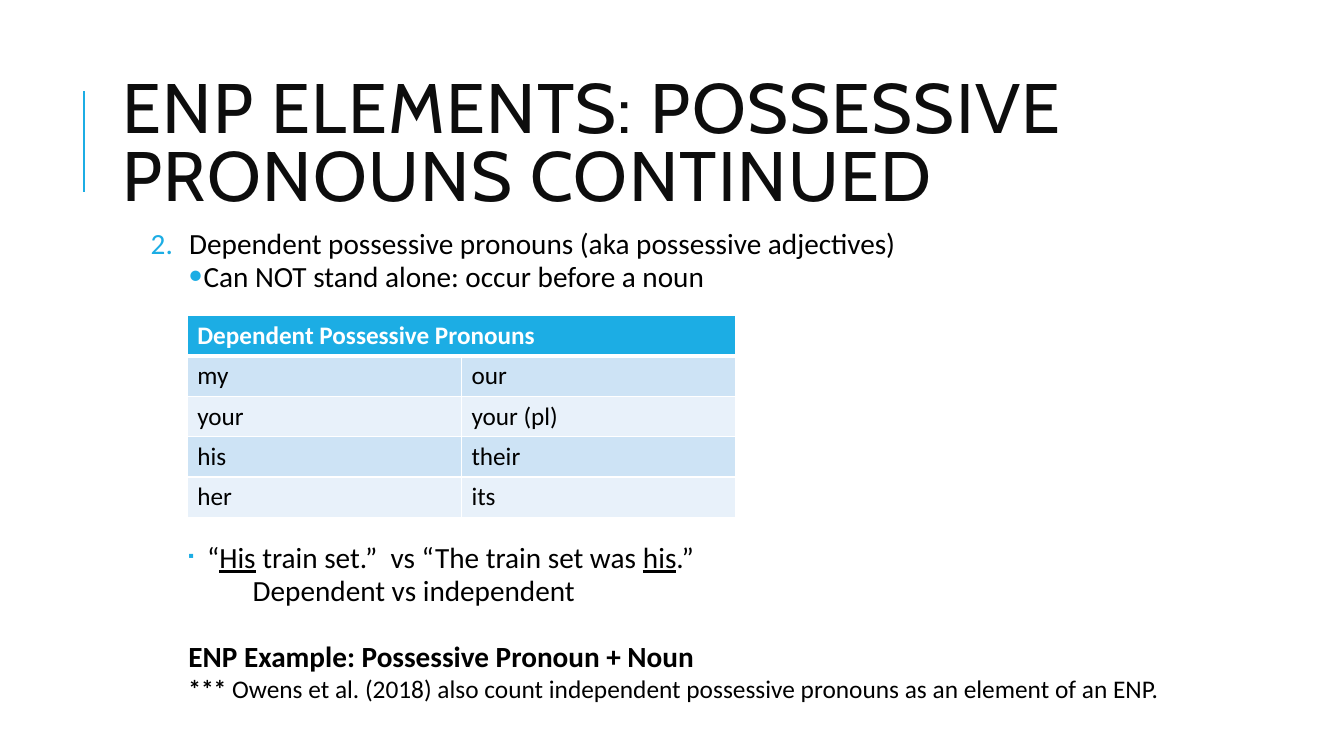
from dataclasses import dataclass

from lxml.etree import SubElement
from pptx import Presentation
from pptx.dml.color import RGBColor
from pptx.enum.shapes import MSO_CONNECTOR
from pptx.enum.text import MSO_ANCHOR
from pptx.oxml import parse_xml
from pptx.oxml.ns import nsdecls, qn
from pptx.util import Cm, Pt


@dataclass(frozen=True)
class Theme:
    title_font: str = "Cabin"
    body_font: str = "Calibri"
    accent: str = "1CADE4"
    title_color: str = "0D0D0D"
    text: str = "000000"
    white: str = "FFFFFF"
    bands: tuple = ("CDE3F5", "E8F1FA")
    title_size: float = 50
    body_size: float = 20.9
    note_size: float = 18.1
    table_size: float = 18
    spacer_size: float = 11.4


@dataclass(frozen=True)
class Box:
    left: float
    top: float
    width: float
    height: float

    def lengths(self):
        return Cm(self.left), Cm(self.top), Cm(self.width), Cm(self.height)


THEME = Theme()
NUMBER = ("buAutoNum", {"type": "arabicPeriod", "startAt": "2"})
DOT = ("buChar", {"char": "•"})
SQUARE = ("buChar", {"char": "▪"})
PRONOUNS = [("my", "our"), ("your", "your (pl)"), ("his", "their"), ("her", "its")]


def set_font(font, name, size, color, bold=False):
    font.name = name
    font.size = Pt(size)
    font.bold = bold
    font.color.rgb = RGBColor.from_string(color)


def add_text_frame(slide, box):
    frame = slide.shapes.add_textbox(*box.lengths()).text_frame
    frame.word_wrap = True
    return frame


def add_title(slide, box):
    # Accent rule to the left of the title
    rule_left = Cm(box.left - 0.73)
    rule = slide.shapes.add_connector(
        MSO_CONNECTOR.STRAIGHT, rule_left, Cm(box.top + 3.2), rule_left, Cm(box.top + 0.66))
    rule.line.color.rgb = RGBColor.from_string(THEME.accent)
    rule.line.width = Pt(1.5)
    SubElement(rule._element.spPr, qn("a:effectLst"))

    # Title text
    frame = add_text_frame(slide, box)
    frame.vertical_anchor = MSO_ANCHOR.MIDDLE
    paragraph = frame.paragraphs[0]
    paragraph.line_spacing = 0.8
    run = paragraph.add_run()
    run.text = "ENP ELEMENTS: POSSESSIVE PRONOUNS CONTINUED"
    set_font(paragraph.font, THEME.title_font, THEME.title_size, THEME.title_color)
    run.font._element.set("spc", "100")


def add_bullet(paragraph, bullet):
    tag, attributes = bullet
    properties = paragraph._p.get_or_add_pPr()
    color = SubElement(properties, qn("a:buClr"))
    SubElement(color, qn("a:srgbClr"), val=THEME.accent)
    SubElement(properties, qn("a:buFont"), typeface=THEME.body_font)
    SubElement(properties, qn(f"a:{tag}"), attributes)


def add_body(slide, box, lines):
    """Each line is (runs, margin, indent, options); a run is (text, font settings)."""
    frame = add_text_frame(slide, box)
    frame.margin_left = frame.margin_right = Cm(0.13)
    frame.margin_top = frame.margin_bottom = Cm(0.13)
    for index, (runs, margin, indent, options) in enumerate(lines):
        paragraph = frame.add_paragraph() if index else frame.paragraphs[0]
        paragraph.line_spacing = 0.7
        paragraph.space_before = Pt(options.get("before", 2))
        paragraph.space_after = Pt(4)
        properties = paragraph._p.get_or_add_pPr()
        properties.set("marL", str(Cm(margin)))
        properties.set("indent", str(Cm(indent)))
        if "bullet" in options:
            add_bullet(paragraph, options["bullet"])
        set_font(paragraph.font, THEME.body_font, options.get("size", THEME.body_size),
                 THEME.text)
        for text, settings in runs:
            run = paragraph.add_run()
            run.text = text
            for name, value in settings.items():
                setattr(run.font, name, value)


def style_cell(cell, fill, color, bold, bottom_width):
    cell.fill.solid()
    cell.fill.fore_color.rgb = RGBColor.from_string(fill)
    set_font(cell.text_frame.paragraphs[0].font, THEME.body_font, THEME.table_size, color, bold)
    # Borders come before the fill in the cell properties
    widths = {"lnL": 1, "lnR": 1, "lnT": 1, "lnB": bottom_width}
    for position, (side, width) in enumerate(widths.items()):
        border = parse_xml(
            f'<a:{side} {nsdecls("a")} w="{Pt(width)}"><a:solidFill>'
            f'<a:srgbClr val="{THEME.white}"/></a:solidFill></a:{side}>')
        cell._tc.get_or_add_tcPr().insert(position, border)


def add_pronoun_table(slide, box):
    row_count = len(PRONOUNS) + 1
    table = slide.shapes.add_table(row_count, 2, *box.lengths()).table
    # Header across both columns
    table.cell(0, 0).text = "Dependent Possessive Pronouns"
    for column in range(2):
        style_cell(table.cell(0, column), THEME.accent, THEME.white, True, 3)
    table.cell(0, 0).merge(table.cell(0, 1))
    # Banded rows
    for row, pair in enumerate(PRONOUNS, start=1):
        for column, word in enumerate(pair):
            cell = table.cell(row, column)
            cell.text = word
            style_cell(cell, THEME.bands[(row - 1) % 2], THEME.text, False, 1)
            if row == 1:
                cell._tc.tcPr.find(qn("a:lnT")).set("w", str(Pt(3)))


def build_slide(presentation):
    slide = presentation.slides.add_slide(presentation.slide_layouts[6])
    add_title(slide, Box(2.84, 1.63, 27, 4.17))

    # Definition above the table
    add_body(slide, Box(2.84, 5.79, 27, 2.16), [
        ([("Dependent possessive pronouns (aka possessive adjectives)", {})],
         1.8, -0.97, {"bullet": NUMBER}),
        ([("Can NOT stand alone: occur before a noun", {})], 2.16, -0.38, {"bullet": DOT}),
    ])
    add_pronoun_table(slide, Box(4.72, 7.95, 13.82, 5.08))

    # Examples below the table
    underlined, bold = {"underline": True}, {"bold": True}
    add_body(slide, Box(2.84, 13.7, 27, 4.69), [
        ([(" ", {"size": Pt(THEME.spacer_size)}), ("“", {}), ("His", underlined),
          (" train set.”  vs “The train set was ", {}), ("his", underlined), (".”", {})],
         2.16, -0.38, {"bullet": SQUARE}),
        ([("Dependent vs independent", {})], 3.4, 0, {}),
        ([("ENP Example: Possessive Pronoun + Noun", bold)], 1.78, 0, {"before": 25.85}),
        ([("*** ", bold),
          ("Owens et al. (2018) also count independent possessive pronouns "
           "as an element of an ENP.", {})],
         1.78, 0, {"size": THEME.note_size}),
    ])


def main():
    presentation = Presentation()
    presentation.slide_width = Cm(33.87)
    presentation.slide_height = Cm(19.05)
    build_slide(presentation)
    presentation.save("out.pptx")


if __name__ == "__main__":
    main()
